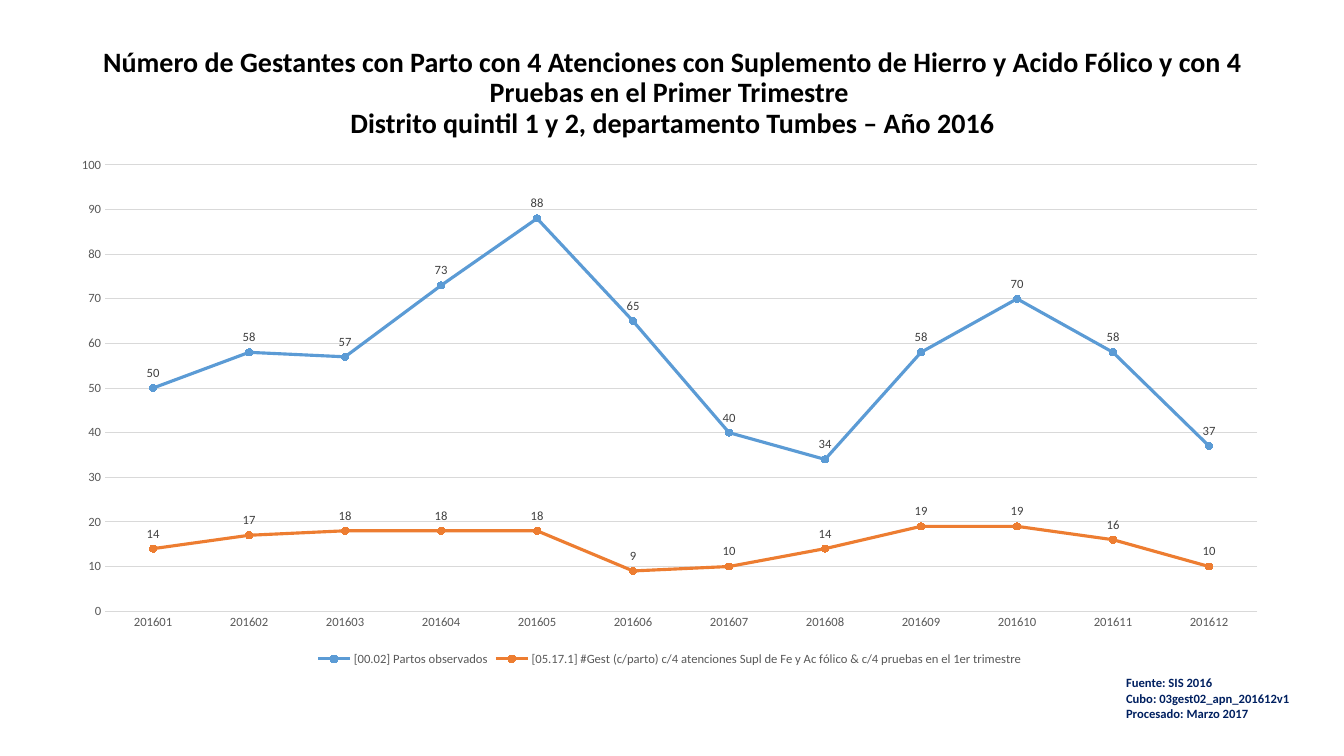
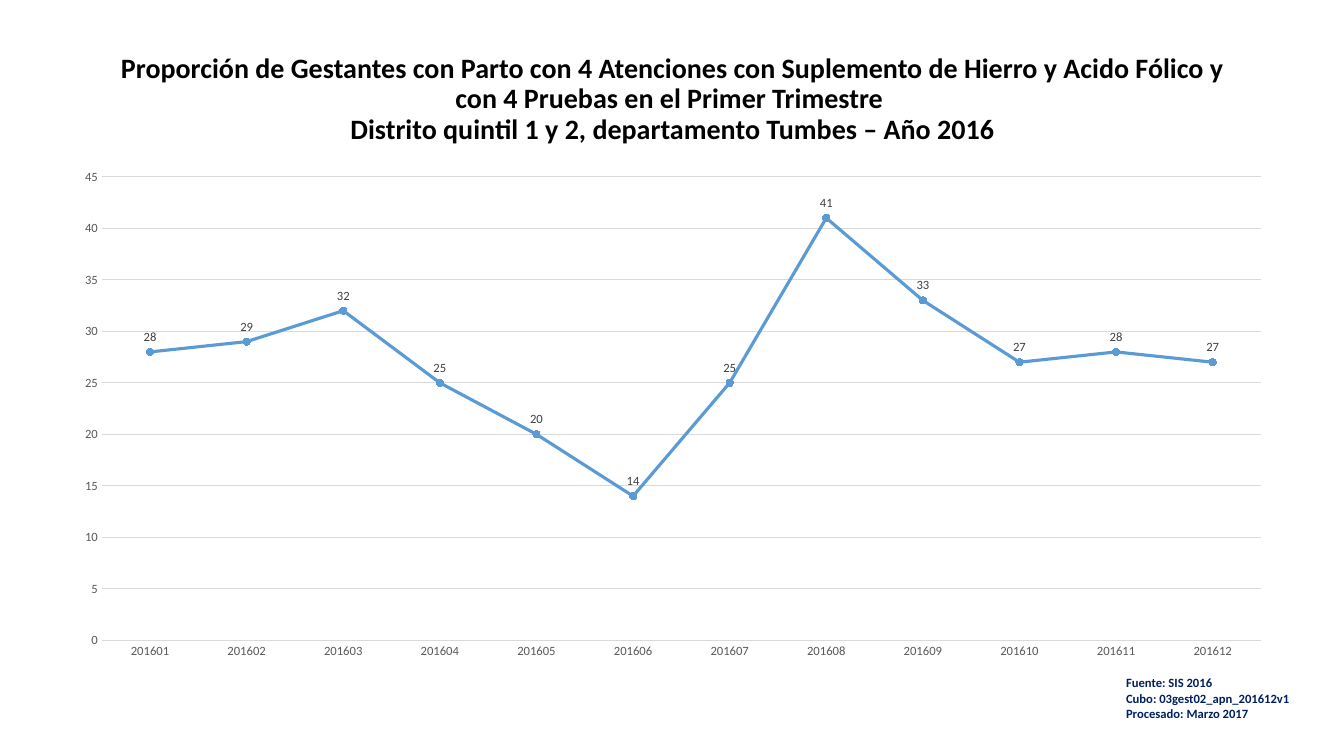
from pptx import Presentation
from pptx.chart.data import CategoryChartData
from pptx.dml.color import RGBColor
from pptx.enum import chart as ch, text as tx
from pptx.util import Inches, Pt

FONT = "Calibri"
BLACK = RGBColor(0x00, 0x00, 0x00)
NAVY = RGBColor(0x00, 0x20, 0x60)
BLUE = RGBColor(0x5B, 0x9B, 0xD5)
ORANGE = RGBColor(0xED, 0x7D, 0x31)
DARK = RGBColor(0x40, 0x40, 0x40)
GRAY = RGBColor(0x59, 0x59, 0x59)
PALE = RGBColor(0xD9, 0xD9, 0xD9)

MONTHS = [f"2016{month:02d}" for month in range(1, 13)]
TOPIC = ("de Gestantes con Parto con 4 Atenciones con Suplemento de Hierro "
         "y Acido Fólico y con 4 Pruebas en el Primer Trimestre ")
PLACE = "Distrito quintil 1 y 2, departamento Tumbes – Año 2016"
SOURCE = ["Fuente: SIS 2016", "Cubo: 03gest02_apn_201612v1",
          "Procesado: Marzo 2017"]

BIRTHS = ("[00.02] Partos observados",
          [50, 58, 57, 73, 88, 65, 40, 34, 58, 70, 58, 37])
CARE = ("[05.17.1] #Gest (c/parto) c/4 atenciones Supl de Fe y Ac fólico "
        "& c/4 pruebas en el 1er trimestre",
        [14, 17, 18, 18, 18, 9, 10, 14, 19, 19, 16, 10])
RATIO = ("Series 1", [28, 29, 32, 25, 20, 14, 25, 41, 33, 27, 28, 27])


def set_font(font, size, color, bold=False):
    font.name = FONT
    font.size = Pt(size)
    font.color.rgb = color
    font.bold = bold


def set_line(line, color, width):
    line.color.rgb = color
    line.width = Pt(width)


def add_run(para, words, size, color):
    run = para.add_run()
    run.text = words
    set_font(run.font, size, color, bold=True)


def set_title(slide, measure, height):
    title = slide.shapes.title
    title.left, title.top = Inches(0.92), Inches(0.4)
    title.width, title.height = Inches(11.5), Inches(height)
    frame = title.text_frame
    frame.auto_size = tx.MSO_AUTO_SIZE.NONE
    frame.vertical_anchor = tx.MSO_ANCHOR.MIDDLE
    para = frame.paragraphs[0]
    para.alignment = tx.PP_ALIGN.CENTER
    para.line_spacing = 0.9
    para.space_before = Pt(0)
    add_run(para, f"{measure} {TOPIC}", 20, BLACK)
    para.add_line_break()
    add_run(para, PLACE, 20, BLACK)


def add_source(slide):
    box = slide.shapes.add_textbox(
        Inches(11.07), Inches(6.65), Inches(2.27), Inches(0.85))
    frame = box.text_frame
    frame.word_wrap = True
    for i, words in enumerate(SOURCE):
        para = frame.add_paragraph() if i else frame.paragraphs[0]
        add_run(para, words, 9, NAVY)


def style_axes(chart, top, step):
    for axis in (chart.category_axis, chart.value_axis):
        axis.major_tick_mark = axis.minor_tick_mark = ch.XL_TICK_MARK.NONE
        set_font(axis.tick_labels.font, 9, GRAY)
    set_line(chart.category_axis.format.line, PALE, 0.75)
    values = chart.value_axis
    values.minimum_scale, values.maximum_scale = 0, top
    values.major_unit = step
    values.format.line.fill.background()
    values.has_major_gridlines = True
    set_line(values.major_gridlines.format.line, PALE, 0.75)
    values.tick_labels.number_format = "0"
    values.tick_labels.number_format_is_linked = False


def style_series(series, color):
    series.smooth = False
    set_line(series.format.line, color, 2.25)
    marker = series.marker
    marker.style = ch.XL_MARKER_STYLE.CIRCLE
    marker.size = 5
    marker.format.fill.solid()
    marker.format.fill.fore_color.rgb = color
    set_line(marker.format.line, color, 0.75)
    labels = series.data_labels
    labels.show_value = True
    labels.position = ch.XL_LABEL_POSITION.ABOVE
    labels.number_format = "0"
    labels.number_format_is_linked = False
    set_font(labels.font, 9, DARK)


def add_lines(slide, place, rows, top, step):
    """Add a line chart; top and step set the value axis."""
    data = CategoryChartData(number_format="0")
    data.categories = MONTHS
    for name, values in rows:
        data.add_series(name, values)
    chart = slide.shapes.add_chart(
        ch.XL_CHART_TYPE.LINE_MARKERS, *map(Inches, place), data).chart
    set_font(chart.font, 10, BLACK)
    chart.has_title = False
    chart.plots[0].vary_by_categories = False
    chart.has_legend = len(rows) > 1
    if chart.has_legend:
        chart.legend.position = ch.XL_LEGEND_POSITION.BOTTOM
        chart.legend.include_in_layout = False
        set_font(chart.legend.font, 9, GRAY)
    style_axes(chart, top, step)
    for series, color in zip(chart.plots[0].series, (BLUE, ORANGE)):
        style_series(series, color)


def add_page(deck, measure, height, place, rows, top, step):
    slide = deck.slides.add_slide(deck.slide_layouts[5])
    set_title(slide, measure, height)
    add_source(slide)
    add_lines(slide, place, rows, top, step)


def main():
    deck = Presentation()
    deck.slide_width, deck.slide_height = Inches(13.33), Inches(7.5)
    add_page(deck, "Número", 1.06, (0.57, 1.46, 12.14, 5.19),
             [BIRTHS, CARE], top=100, step=10)
    add_page(deck, "Proporción", 1.18, (0.6, 1.58, 12.15, 5.06),
             [RATIO], top=45, step=5)
    deck.save("out.pptx")


if __name__ == "__main__":
    main()
